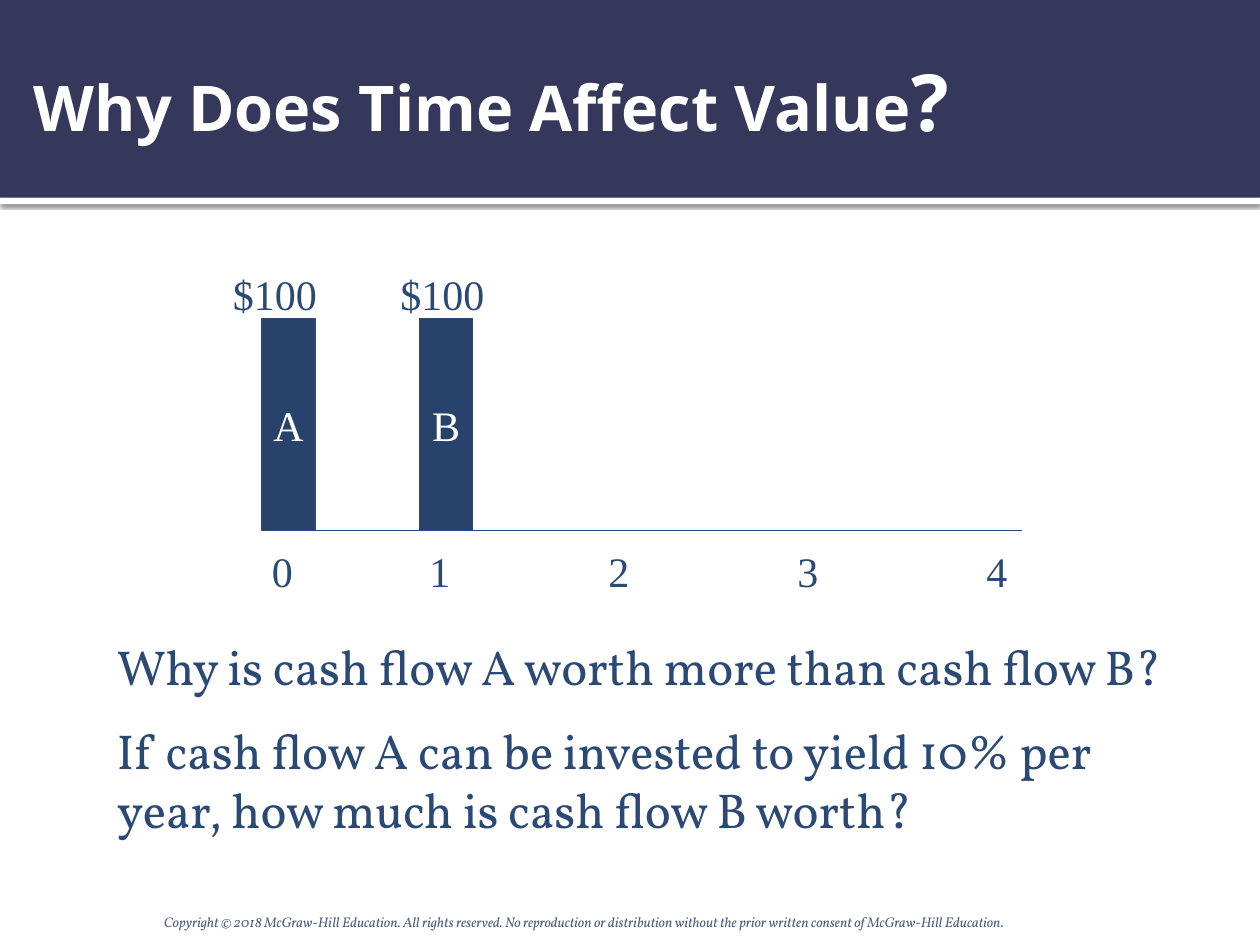
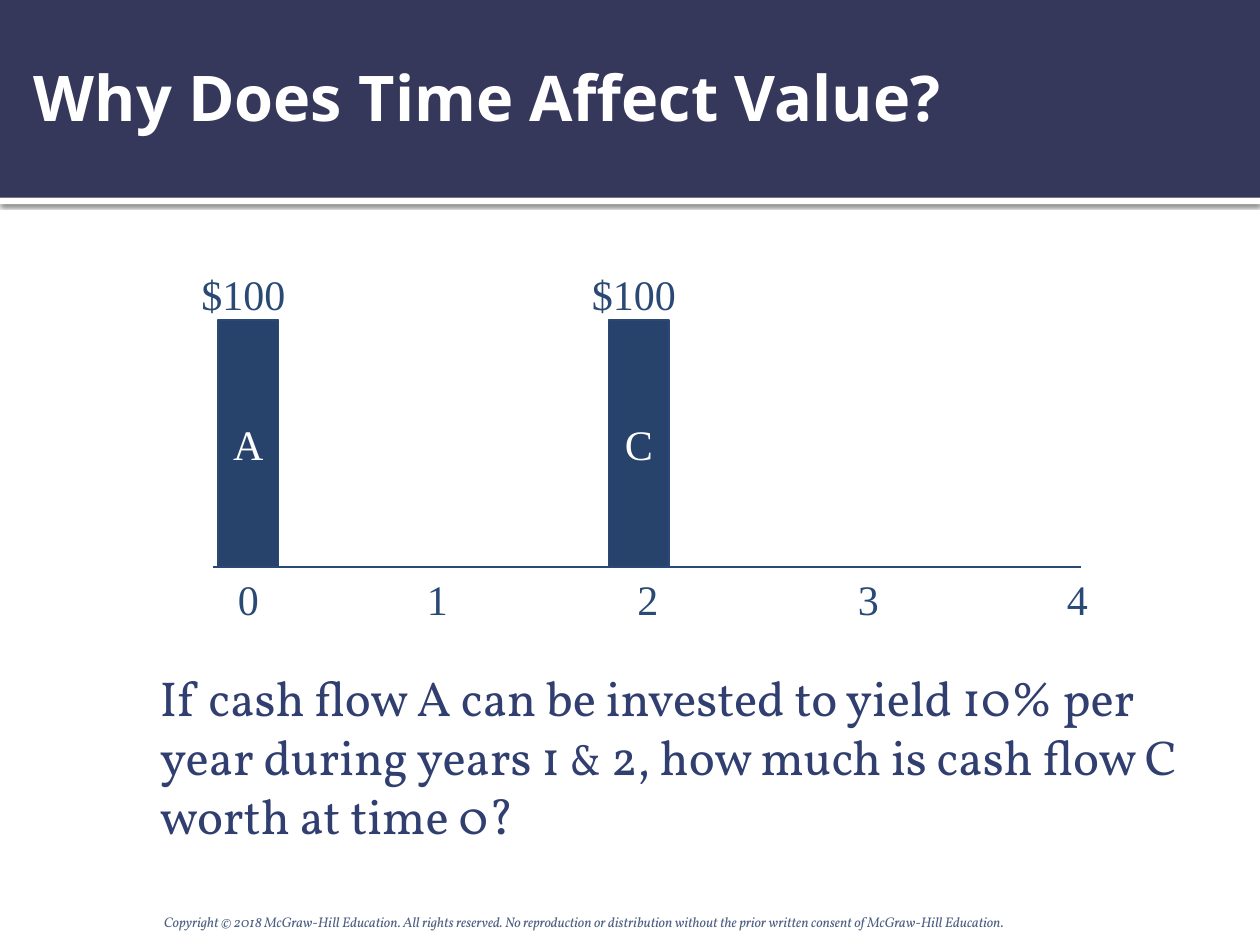
from dataclasses import dataclass
from typing import Optional

import lxml.etree
import pptx
import pptx.dml.color
import pptx.enum.shapes
import pptx.enum.text
import pptx.oxml.ns
import pptx.util
from pptx.util import Inches

Anchor = pptx.enum.text.MSO_ANCHOR
Align = pptx.enum.text.PP_ALIGN
qn = pptx.oxml.ns.qn


@dataclass(frozen=True)
class TextStyle:
    font: str
    size: float
    color: str
    bold: bool = False
    italic: bool = False


@dataclass(frozen=True)
class Theme:
    white: str = "FFFFFF"
    band: str = "35385A"
    bar: str = "27436B"
    ink: str = "2A4A75"
    line_width: float = 0.75
    title: TextStyle = TextStyle("Open Sans", 36, "FFFFFF", bold=True)
    large_mark: TextStyle = TextStyle("Open Sans", 45, "FFFFFF", bold=True)
    chart: TextStyle = TextStyle("Times New Roman", 24, "2A4A75")
    bar_letter: TextStyle = TextStyle("Times New Roman", 24, "FFFFFF")
    question: TextStyle = TextStyle("Vollkorn", 28, "2A4A75")
    final_question: TextStyle = TextStyle("Vollkorn", 28, "303F70")
    ampersand: TextStyle = TextStyle("Vollkorn", 24, "303F70")
    footer: TextStyle = TextStyle("Vollkorn", 8, "4E6081", italic=True)


THEME = Theme()
COPYRIGHT = (
    "Copyright © 2018 McGraw-Hill Education. All rights reserved. No reproduction or "
    "distribution without the prior written consent of McGraw-Hill Education."
)


@dataclass(frozen=True)
class Box:
    left: float
    top: float
    width: float
    height: float

    def lengths(self) -> list:
        return [Inches(value) for value in (self.left, self.top, self.width, self.height)]


@dataclass(frozen=True)
class TextBlock:
    box: Box
    runs: tuple[tuple[str, TextStyle], ...]
    wrap: bool = True


@dataclass(frozen=True)
class CashFlow:
    letter: str
    left: float
    amount_left: float


@dataclass(frozen=True)
class Timeline:
    start: float
    end: float
    baseline: float
    bar_top: float
    bar_width: float
    cash_flows: tuple[CashFlow, ...]
    year_box: Box
    year_tabs: tuple[float, ...]


@dataclass(frozen=True)
class SlideContent:
    title: TextBlock
    timeline: Timeline
    questions: tuple[TextBlock, ...]


def rgb(color: str) -> pptx.dml.color.RGBColor:
    return pptx.dml.color.RGBColor.from_string(color)


def set_values(target, values: dict) -> None:
    for name, value in values.items():
        setattr(target, name, value)


def add_runs(paragraph, runs: tuple[tuple[str, TextStyle], ...]) -> None:
    for text, style in runs:
        run = paragraph.add_run()
        run.text = text
        set_values(run.font, {
            "name": style.font,
            "size": pptx.util.Pt(style.size),
            "bold": style.bold,
            "italic": style.italic,
        })
        run.font.color.rgb = rgb(style.color)


def add_text(slide, block: TextBlock, anchor=Anchor.TOP,
             margins: tuple[float, ...] = (0.1, 0.05, 0.1, 0.05)):
    frame = slide.shapes.add_textbox(*block.box.lengths()).text_frame
    left, top, right, bottom = map(Inches, margins)
    set_values(frame, {
        "word_wrap": block.wrap,
        "vertical_anchor": anchor,
        "margin_left": left,
        "margin_top": top,
        "margin_right": right,
        "margin_bottom": bottom,
    })
    paragraph = frame.paragraphs[0]
    add_runs(paragraph, block.runs)
    return paragraph


def add_rectangle(slide, box: Box, fill: str, line: Optional[str] = None):
    shape = slide.shapes.add_shape(
        pptx.enum.shapes.MSO_SHAPE.RECTANGLE, *box.lengths())
    shape.shadow.inherit = False
    shape.fill.solid()
    shape.fill.fore_color.rgb = rgb(fill)
    if line:
        shape.line.color.rgb = rgb(line)
        shape.line.width = pptx.util.Pt(THEME.line_width)
    else:
        shape.line.fill.background()
    return shape


def add_drop_shadow(shape) -> None:
    effects = shape._element.spPr.find(qn("a:effectLst"))
    shadow = lxml.etree.SubElement(
        effects, qn("a:outerShdw"), blurRad=str(pptx.util.Pt(2.5)),
        dist=str(pptx.util.Pt(0.8)), dir="5400000", algn="tl", rotWithShape="0")
    color = lxml.etree.SubElement(shadow, qn("a:srgbClr"), val="000000")
    lxml.etree.SubElement(color, qn("a:alpha"), val="60000")


def add_tab_stops(paragraph, positions: tuple[float, ...]) -> None:
    tab_list = lxml.etree.SubElement(
        paragraph._p.get_or_add_pPr(), qn("a:tabLst"))
    for position in positions:
        lxml.etree.SubElement(
            tab_list, qn("a:tab"), pos=str(Inches(position)), algn="l")


def add_axis(slide, timeline: Timeline) -> None:
    axis = slide.shapes.add_connector(
        pptx.enum.shapes.MSO_CONNECTOR.STRAIGHT,
        Inches(timeline.start), Inches(timeline.baseline),
        Inches(timeline.end), Inches(timeline.baseline))
    axis.line.color.rgb = rgb(THEME.ink)
    axis.line.width = pptx.util.Pt(THEME.line_width)
    lxml.etree.SubElement(axis._element.spPr, qn("a:effectLst"))
    years = "\t".join(str(year) for year in range(5))
    paragraph = add_text(
        slide, TextBlock(timeline.year_box, ((years, THEME.chart),)))
    add_tab_stops(paragraph, timeline.year_tabs)


def add_cash_flow(slide, timeline: Timeline, cash_flow: CashFlow) -> None:
    bar = add_rectangle(
        slide,
        Box(cash_flow.left, timeline.bar_top, timeline.bar_width,
            timeline.baseline - timeline.bar_top),
        THEME.bar, THEME.ink)
    set_values(bar.text_frame, {"word_wrap": False, "vertical_anchor": Anchor.MIDDLE})
    paragraph = bar.text_frame.paragraphs[0]
    paragraph.alignment = Align.CENTER
    add_runs(paragraph, ((cash_flow.letter, THEME.bar_letter),))
    add_text(slide, TextBlock(
        Box(cash_flow.amount_left, 2.08, 0.87, 0.5),
        (("$100", THEME.chart),), wrap=False))


def add_slide(presentation, content: SlideContent) -> None:
    slide = presentation.slides.add_slide(presentation.slide_layouts[6])
    add_drop_shadow(add_rectangle(slide, Box(0, 1.57, 10, 0.05), THEME.white))
    add_rectangle(slide, Box(0, 0, 10, 1.57), THEME.band)
    add_text(slide, content.title, Anchor.MIDDLE, (0.1, 0.05, 0.05, 0.05))
    add_axis(slide, content.timeline)
    for cash_flow in content.timeline.cash_flows:
        add_cash_flow(slide, content.timeline, cash_flow)
    for question in content.questions:
        add_text(slide, question)
    add_text(
        slide,
        TextBlock(Box(1.25, 7.08, 7.66, 0.3), ((COPYRIGHT, THEME.footer),)),
        Anchor.BOTTOM, (0.05, 0.05, 0.05, 0))


SLIDES = (
    SlideContent(
        title=TextBlock(Box(0.17, 0.17, 9, 1.25), (
            ("Why Does Time Affect Value", THEME.title),
            ("?", THEME.large_mark))),
        timeline=Timeline(
            start=2.19, end=8.11, baseline=4.21, bar_top=2.53, bar_width=0.42,
            cash_flows=(CashFlow("A", 2.08, 1.75), CashFlow("B", 3.33, 3.08)),
            year_box=Box(2.06, 4.28, 6.36, 0.5),
            year_tabs=(1.25, 2.67, 4.17, 5.67)),
        questions=(
            TextBlock(Box(0.83, 5, 8.86, 0.57), (
                ("Why is cash flow A worth more than cash flow B?",
                 THEME.question),), wrap=False),
            TextBlock(Box(0.83, 5.67, 8.67, 1.03), (
                ("If cash flow A can be invested to yield 10% per year, "
                 "how much is cash flow B worth?", THEME.question),)))),
    SlideContent(
        title=TextBlock(Box(0.17, 0.25, 9, 1.03), (
            ("Why Does Time Affect Value?", THEME.title),)),
        timeline=Timeline(
            start=1.69, end=8.58, baseline=4.5, bar_top=2.54, bar_width=0.48,
            cash_flows=(CashFlow("A", 1.73, 1.5), CashFlow("C", 4.83, 4.6)),
            year_box=Box(1.79, 4.5, 7.3, 0.5),
            year_tabs=(1.5, 3.17, 4.92, 6.58)),
        questions=(
            TextBlock(Box(1.17, 5.25, 8.33, 1.5), (
                ("If cash flow A can be invested to yield 10% per year "
                 "during years 1 ", THEME.final_question),
                ("&", THEME.ampersand),
                (" 2, how much is cash flow C worth at time 0?",
                 THEME.final_question))),)),
)


def main() -> None:
    presentation = pptx.Presentation()
    presentation.slide_width = Inches(10)
    presentation.slide_height = Inches(7.5)
    for content in SLIDES:
        add_slide(presentation, content)
    presentation.save("out.pptx")


if __name__ == "__main__":
    main()
